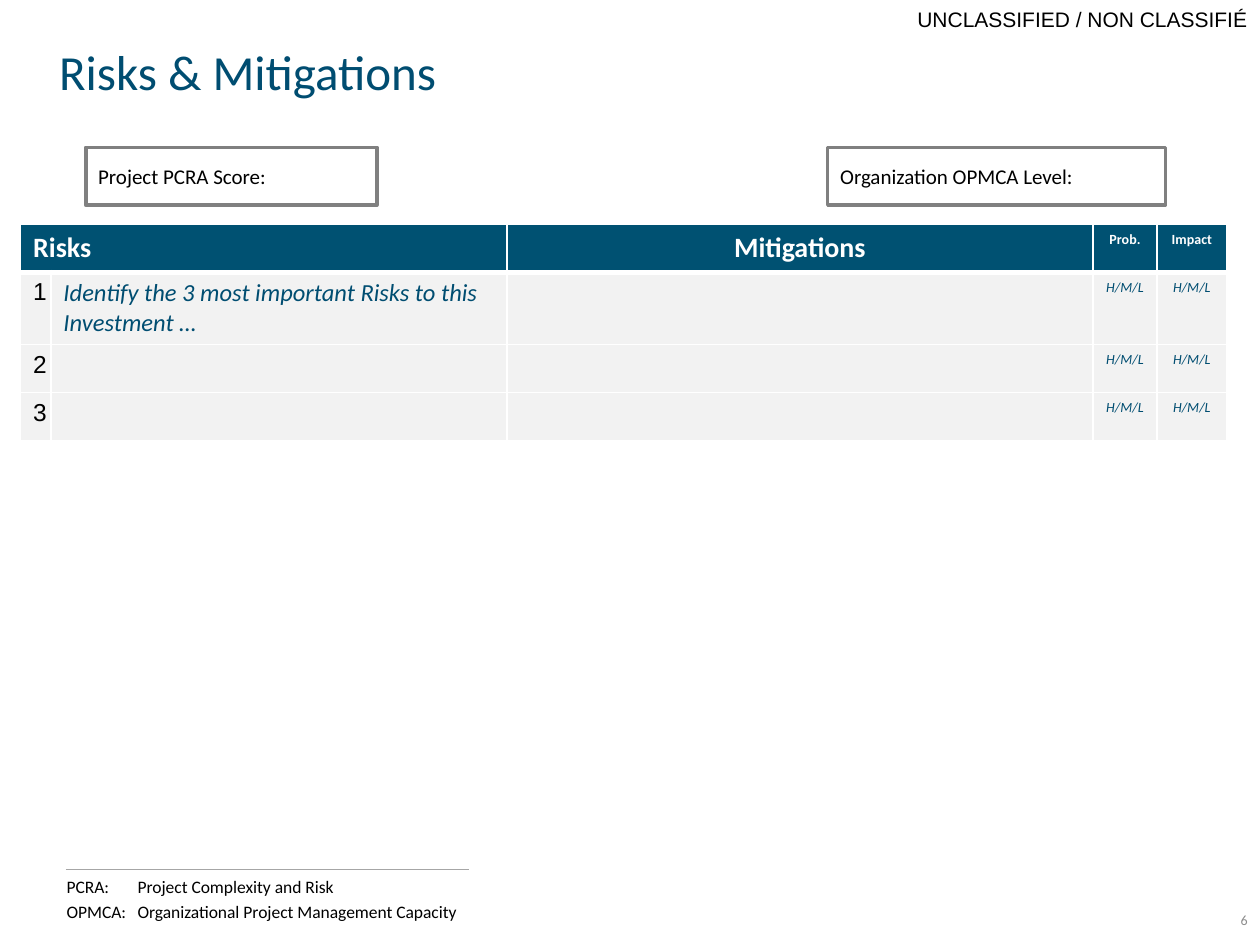
"""Build the Risks & Mitigations slide."""
from dataclasses import dataclass
from typing import Optional

from lxml import etree
from pptx import Presentation
from pptx.dml.color import RGBColor
from pptx.enum.shapes import MSO_CONNECTOR, MSO_SHAPE
from pptx.enum.text import MSO_ANCHOR, PP_ALIGN
from pptx.oxml.ns import qn
from pptx.util import Pt

LEFT, CENTER, RIGHT = PP_ALIGN.LEFT, PP_ALIGN.CENTER, PP_ALIGN.RIGHT
TOP, MIDDLE = MSO_ANCHOR.TOP, MSO_ANCHOR.MIDDLE
RECTANGLE = MSO_SHAPE.RECTANGLE
STRAIGHT = MSO_CONNECTOR.STRAIGHT


@dataclass(frozen=True)
class Theme:
    heading_font: str = "Calibri"
    plain_font: str = "Arial"
    black: str = "000000"
    white: str = "FFFFFF"
    title: str = "004D71"
    header_fill: str = "005172"
    row_fill: str = "F2F2F2"
    box_line: str = "808080"
    rule: str = "A6A6A6"
    page: str = "8C8C8C"
    title_size: float = 28
    header_size: float = 16
    body_size: float = 14
    label_size: float = 12
    note_size: float = 10
    small_size: float = 8


THEME = Theme()


@dataclass(frozen=True)
class Style:
    size: float
    color: str = THEME.black
    font: str = THEME.heading_font
    bold: bool = False
    italic: bool = False
    align: PP_ALIGN = LEFT


@dataclass(frozen=True)
class Label:
    text: str
    left: float
    top: float
    width: float
    height: float
    style: Style
    anchor: MSO_ANCHOR = TOP
    inset: bool = True
    tab: Optional[float] = None
    outlined: bool = False


NOTE = Style(THEME.note_size)
SCORE = Style(THEME.label_size)
HEADER = Style(THEME.header_size, THEME.white, bold=True)
HEADER_CENTER = Style(THEME.header_size, THEME.white, bold=True, align=CENTER)
HEADER_SMALL = Style(THEME.small_size, THEME.white, bold=True, align=CENTER)
NUMBER = Style(THEME.body_size, font=THEME.plain_font)
RISK = Style(THEME.body_size, THEME.title, italic=True)
RATING = Style(THEME.small_size, THEME.title, italic=True, align=CENTER)

LABELS = (
    Label("UNCLASSIFIED / NON CLASSIFIÉ", 0, 0, 720, 21.8,
          Style(THEME.label_size, font=THEME.plain_font, align=RIGHT)),
    Label("Risks & Mitigations", 33.84, 10.8, 427.7, 59,
          Style(THEME.title_size, THEME.title), MIDDLE, inset=False),
    Label("6", 689.8, 511.2, 30.2, 28.8,
          Style(THEME.small_size, THEME.page, align=RIGHT), MIDDLE),
    Label("Project PCRA Score:", 49, 84.2, 166.3, 33.1, SCORE, MIDDLE, outlined=True),
    Label("Organization OPMCA Level:", 473, 84.2, 193, 33.1, SCORE, MIDDLE, outlined=True),
    Label("OPMCA:\tOrganizational Project Management Capacity",
          31, 511.2, 257, 19.4, NOTE, tab=40.5),
    Label("PCRA:\tProject Complexity and Risk", 31, 496.8, 169.2, 19.4, NOTE, tab=40.5),
)

COLUMN_WIDTHS = (17.3, 260.6, 334.8, 36.8, 39.6)
ROW_HEIGHTS = (27.4, 41.4, 27.4, 27.4)
HEADINGS = ("Risks", "", "Mitigations", "Prob.", "Impact")
HEADING_STYLES = (HEADER, HEADER, HEADER_CENTER, HEADER_SMALL, HEADER_SMALL)
RISKS = ("Identify the 3 most important Risks to this Investment …", "", "")
RISK_STYLES = (NUMBER, RISK, RISK, RATING, RATING)


def rgb(color: str) -> RGBColor:
    return RGBColor.from_string(color)


def write(frame, text: str, style: Style) -> None:
    paragraph = frame.paragraphs[0]
    paragraph.alignment = style.align
    if not text:
        ending = etree.SubElement(paragraph._p, qn("a:endParaRPr"))
        ending.set("sz", str(int(style.size * 100)))
        etree.SubElement(ending, qn("a:latin")).set("typeface", style.font)
        return
    run = paragraph.add_run()
    run.text = text
    font = run.font
    font.name, font.size = style.font, Pt(style.size)
    font.bold, font.italic = style.bold, style.italic
    font.color.rgb = rgb(style.color)


def add_label(slide, label: Label) -> None:
    bounds = [Pt(n) for n in (label.left, label.top, label.width, label.height)]
    if label.outlined:
        holder = slide.shapes.add_shape(RECTANGLE, *bounds)
        holder.shadow.inherit = False
        holder.fill.background()
        holder.line.color.rgb = rgb(THEME.box_line)
        holder.line.width = Pt(2)
    else:
        holder = slide.shapes.add_textbox(*bounds)
    frame = holder.text_frame
    frame.word_wrap = True
    frame.vertical_anchor = label.anchor
    if not label.inset:
        frame.margin_left = frame.margin_right = Pt(0)
        frame.margin_top = frame.margin_bottom = Pt(0)
    if label.tab is not None:
        properties = frame.paragraphs[0]._p.get_or_add_pPr()
        stops = etree.SubElement(properties, qn("a:tabLst"))
        etree.SubElement(stops, qn("a:tab"), pos=str(Pt(label.tab)), algn="l")
    write(frame, label.text, label.style)


def set_borders(cell, top: float, bottom: float) -> None:
    properties = cell._tc.get_or_add_tcPr()
    sides = (("a:lnL", 1), ("a:lnR", 1), ("a:lnT", top), ("a:lnB", bottom))
    for position, (side, width) in enumerate(sides):
        border = etree.Element(qn(side), w=str(Pt(width)))
        fill = etree.SubElement(border, qn("a:solidFill"))
        etree.SubElement(fill, qn("a:srgbClr"), val=THEME.white)
        properties.insert(position, border)


def add_risk_table(slide) -> None:
    rows = [HEADINGS] + [(str(number), risk, "", "H/M/L", "H/M/L")
                         for number, risk in enumerate(RISKS, 1)]
    table = slide.shapes.add_table(
        len(rows), len(COLUMN_WIDTHS), Pt(11.8), Pt(128.2),
        Pt(sum(COLUMN_WIDTHS)), Pt(sum(ROW_HEIGHTS))).table
    table.first_row = table.horz_banding = False
    for column, width in zip(table.columns, COLUMN_WIDTHS):
        column.width = Pt(width)
    for index, (texts, height) in enumerate(zip(rows, ROW_HEIGHTS)):
        table.rows[index].height = Pt(height)
        heading = index == 0
        styles = HEADING_STYLES if heading else RISK_STYLES
        for cell, text, style in zip(table.rows[index].cells, texts, styles):
            cell.fill.solid()
            cell.fill.fore_color.rgb = rgb(THEME.header_fill if heading else THEME.row_fill)
            set_borders(cell, 3 if index == 1 else 1, 3 if heading else 1)
            write(cell.text_frame, text, style)
    table.cell(0, 0).merge(table.cell(0, 1))


def add_footnote_rule(slide) -> None:
    rule = slide.shapes.add_connector(STRAIGHT, Pt(37.6), Pt(496.8), Pt(268), Pt(496.8))
    rule.line.color.rgb = rgb(THEME.rule)
    rule.line.width = Pt(0.75)
    etree.SubElement(rule._element.spPr, qn("a:effectLst"))


def main() -> None:
    deck = Presentation()
    deck.slide_width, deck.slide_height = Pt(720), Pt(540)
    slide = deck.slides.add_slide(deck.slide_layouts[6])
    add_risk_table(slide)
    for label in LABELS:
        add_label(slide, label)
    add_footnote_rule(slide)
    deck.save("out.pptx")


if __name__ == "__main__":
    main()
